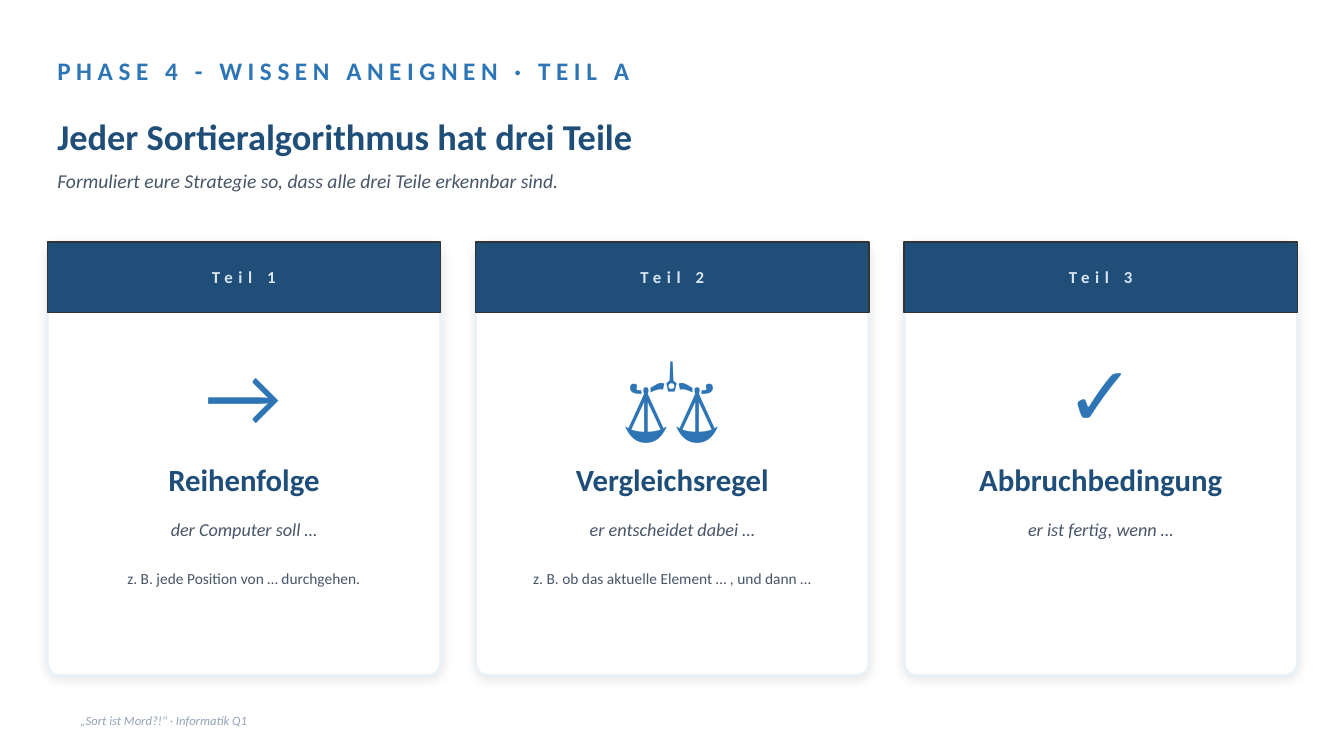
from lxml.etree import SubElement
from pptx import Presentation
from pptx.dml.color import RGBColor
from pptx.enum.shapes import MSO_SHAPE
from pptx.enum.text import MSO_ANCHOR, PP_ALIGN
from pptx.oxml.ns import qn
from pptx.util import Pt

COLORS = {
    "white": "FFFFFF",
    "navy": "1F4E79",
    "blue": "2E75B6",
    "slate": "475569",
    "pale": "D9E5F1",
    "card_line": "EAF2F8",
    "band_line": "333333",
    "footer": "94A3B8",
    "shadow": "000000",
}
FONT = "Calibri"
MARGIN = 33.84
CARD_TOP, CARD_W, CARD_H, CARD_GAP = 172.8, 280.8, 309.6, 25.2
BAND_H = 50.4
CARDS = [
    ("Teil 1", "→", "Reihenfolge", "der Computer soll …",
     "z. B. jede Position von … durchgehen."),
    ("Teil 2", "⚖", "Vergleichsregel", "er entscheidet dabei …",
     "z. B. ob das aktuelle Element … , und dann …"),
    ("Teil 3", "✓", "Abbruchbedingung", "er ist fertig, wenn …", None),
]


def rgb(name):
    return RGBColor.from_string(COLORS[name])


def write(sp, text, size, color, bold=False, italic=False, spacing=0,
          align=PP_ALIGN.LEFT, anchor=MSO_ANCHOR.MIDDLE):
    tf = sp.text_frame
    tf.word_wrap = True
    tf.vertical_anchor = anchor
    p = tf.paragraphs[0]
    p.alignment = align
    r = p.add_run()
    r.text = text
    r.font.name = FONT
    r.font.size = Pt(size)
    r.font.bold = bold
    r.font.italic = italic
    r.font.color.rgb = rgb(color)
    if spacing:
        r.font._element.set("spc", str(spacing * 100))


def add_text(s, x, y, w, h, text, size, color, **style):
    sp = s.shapes.add_textbox(Pt(x), Pt(y), Pt(w), Pt(h))
    write(sp, text, size, color, **style)


def add_box(s, kind, x, y, w, h, fill, line, line_width):
    sp = s.shapes.add_shape(kind, Pt(x), Pt(y), Pt(w), Pt(h))
    sp.shadow.inherit = False
    sp.fill.solid()
    sp.fill.fore_color.rgb = rgb(fill)
    sp.line.color.rgb = rgb(line)
    sp.line.width = Pt(line_width)
    return sp


def add_soft_shadow(sp):
    effects = sp._element.spPr.find(qn("a:effectLst"))
    shadow = SubElement(effects, qn("a:outerShdw"), blurRad=str(Pt(8)),
                        dist=str(Pt(2)), dir="5400000", algn="bl",
                        rotWithShape="0")
    color = SubElement(shadow, qn("a:srgbClr"), val=COLORS["shadow"])
    SubElement(color, qn("a:alpha"), val="10000")


def add_header(s, x, y, w):
    add_text(s, x, y, 576, 28.8, "PHASE 4 - WISSEN ANEIGNEN · TEIL A",
             18, "blue", bold=True, spacing=4)
    add_text(s, x, y + 39.6, w, 43.2, "Jeder Sortieralgorithmus hat drei Teile",
             26, "navy", bold=True)
    add_text(s, x, y + 78.48, w, 28.8,
             "Formuliert eure Strategie so, dass alle drei Teile erkennbar sind.",
             14, "slate", italic=True)


def add_card(s, x, y, w, h, label, icon, title, starter, example):
    card = add_box(s, MSO_SHAPE.ROUNDED_RECTANGLE, x, y, w, h,
                   "white", "card_line", 2)
    card.adjustments[0] = 0.031
    add_soft_shadow(card)
    band = add_box(s, MSO_SHAPE.RECTANGLE, x, y, w, BAND_H,
                   "navy", "band_line", 1)
    center = PP_ALIGN.CENTER
    write(band, label, 12, "pale", bold=True, spacing=4, align=center)
    add_text(s, x, y + 72, w, 72, icon, 60, "blue", align=center)
    add_text(s, x, y + 151.2, w, 36, title, 22, "navy", bold=True, align=center)
    add_text(s, x, y + 190.8, w, 28.8, starter, 13, "slate",
             italic=True, align=center)
    if example:
        inset = 21.6
        add_text(s, x + inset, y + 230.4, w - 2 * inset, 72, example, 11,
                 "slate", align=center, anchor=MSO_ANCHOR.TOP)


def add_footer(s, x, y, w, h):
    add_text(s, x, y, w, h, "„Sort ist Mord?!\" · Informatik Q1",
             9, "footer", italic=True)


def main():
    prs = Presentation()
    prs.slide_width, prs.slide_height = Pt(960), Pt(540)
    s = prs.slides.add_slide(prs.slide_layouts[6])
    s.background.fill.solid()
    s.background.fill.fore_color.rgb = rgb("white")
    add_header(s, MARGIN, 36, 864)
    for i, card in enumerate(CARDS):
        add_card(s, MARGIN + i * (CARD_W + CARD_GAP), CARD_TOP,
                 CARD_W, CARD_H, *card)
    add_footer(s, 50.4, 504, 360, 21.6)
    prs.save("out.pptx")


if __name__ == "__main__":
    main()
